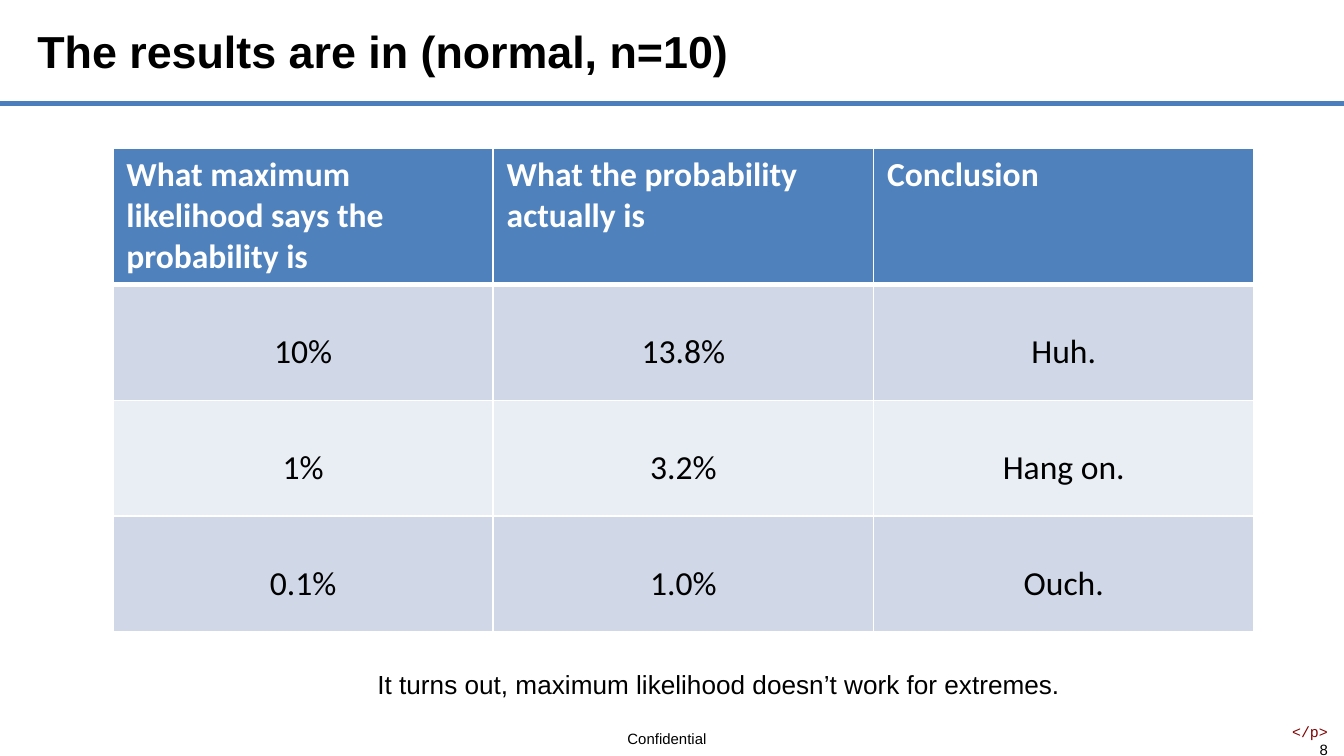
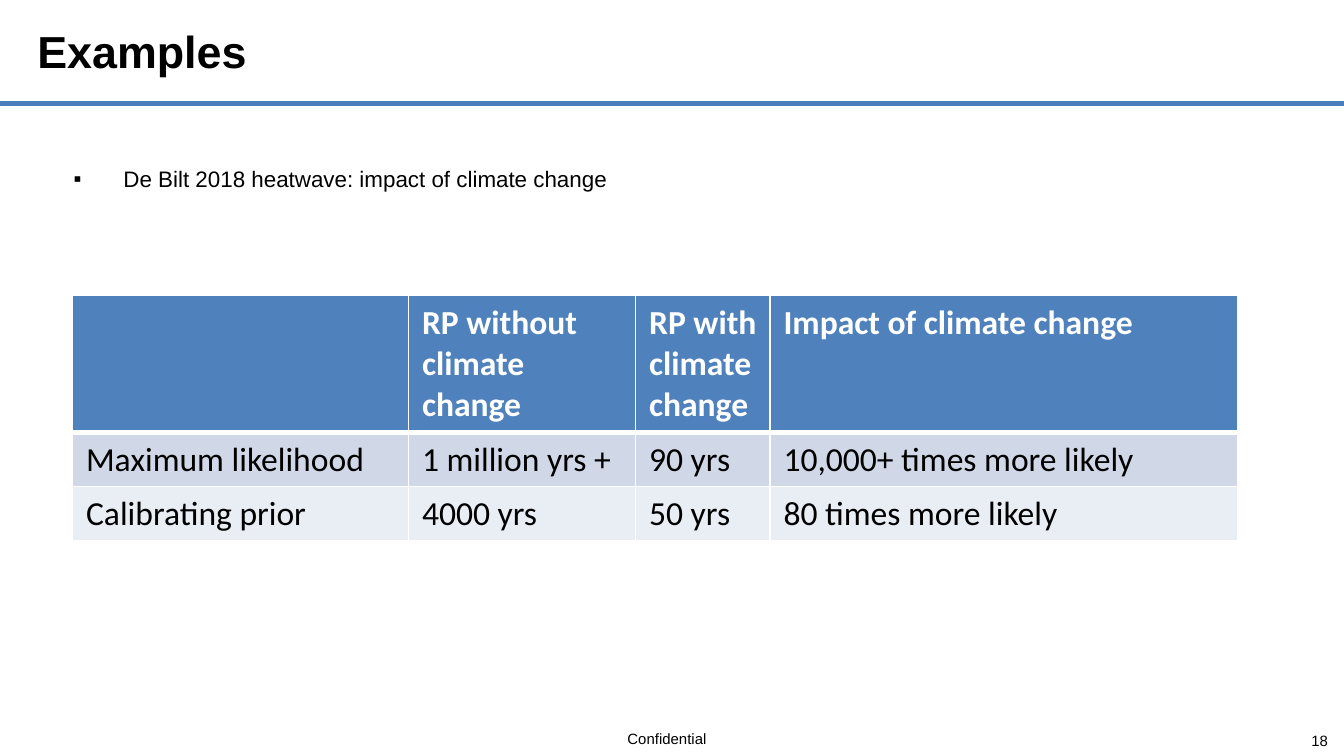
from dataclasses import dataclass
from typing import NamedTuple

from lxml.etree import SubElement
from pptx import Presentation
from pptx.dml.color import RGBColor
from pptx.enum.shapes import MSO_CONNECTOR as Link
from pptx.enum.text import MSO_ANCHOR as Anchor, PP_ALIGN as Align
from pptx.oxml import parse_xml
from pptx.oxml.ns import nsdecls, qn
from pptx.util import Inches, Pt

BLACK = RGBColor(0x00, 0x00, 0x00)
WHITE = RGBColor(0xFF, 0xFF, 0xFF)
MAROON = RGBColor(0x80, 0x00, 0x00)
RULE = RGBColor(0x4B, 0x7E, 0xBC)
HEAD = RGBColor(0x4F, 0x81, 0xBD)
BANDS = (RGBColor(0xD0, 0xD8, 0xE8), RGBColor(0xE9, 0xED, 0xF4))

SANS, MONO, TABLE = "Arial", "Courier New", "Calibri"
WIDE = 10
HIGH = WIDE * 9 / 16
RULE_TOP = 0.77
HEAD_HIGH = 1.02
THIN, THICK = 1, 3


class Run(NamedTuple):
    text: str
    size: float
    font: str = SANS
    color: RGBColor = BLACK
    bold: bool = False


class Box(NamedTuple):
    left: float
    top: float
    width: float
    height: float


TITLE = Box(0.18, 0, 9, 0.75)
FOOTER = Box(4.57, 5.38, 1.06, 0.24)
NUMBER = Box(7.65, 5.36, 2.33, 0.3)


@dataclass
class Grid:
    left: float
    top: float
    widths: list[float]
    row_high: float
    rows: list[list[str]]
    align: Align = Align.LEFT
    inset: float = 0.05  # space above the text of body cells


def add_run(para, run: Run) -> None:
    part = para.add_run()
    part.text = run.text
    font = part.font
    font.name, font.size, font.bold = run.font, Pt(run.size), run.bold
    font.color.rgb = run.color


def add_text(slide, box: Box, lines: list[Run], align=Align.LEFT,
             anchor=Anchor.TOP, inset: float = 0.05):
    """Put each run on its own line; inset is the space above the first."""
    frame = slide.shapes.add_textbox(*map(Inches, box)).text_frame
    frame.word_wrap = True
    frame.vertical_anchor = anchor
    frame.margin_top = Inches(inset)
    for index, run in enumerate(lines):
        para = frame.add_paragraph() if index else frame.paragraphs[0]
        para.alignment = align
        add_run(para, run)
    return frame


def add_bullet(para, indent: float) -> None:
    props = para._p.get_or_add_pPr()
    props.set("marL", str(Inches(indent)))
    props.set("indent", str(-Inches(indent)))
    SubElement(props, qn("a:buFont")).set("typeface", SANS)
    SubElement(props, qn("a:buChar")).set("char", "▪")


def add_rule(slide) -> None:
    line = slide.shapes.add_connector(
        Link.STRAIGHT, 0, Inches(RULE_TOP), Inches(WIDE), Inches(RULE_TOP))
    line.line.color.rgb = RULE
    line.line.width = Pt(2.5)
    SubElement(line._element.spPr, qn("a:effectLst"))


def add_slide(deck, title: str, number: list[Run]):
    slide = deck.slides.add_slide(deck.slide_layouts[6])
    add_rule(slide)
    add_text(slide, FOOTER, [Run("Confidential", 8)])
    add_text(slide, TITLE, [Run(title, 24, bold=True)], anchor=Anchor.MIDDLE)
    add_text(slide, NUMBER, number, Align.RIGHT, Anchor.MIDDLE)
    return slide


def set_edges(cell, top: float, bottom: float) -> None:
    """Draw white borders; top and bottom are widths in points."""
    props = cell._tc.get_or_add_tcPr()
    edges = {"L": THIN, "R": THIN, "T": top, "B": bottom}
    for index, (side, width) in enumerate(edges.items()):
        props.insert(index, parse_xml(
            f'<a:ln{side} {nsdecls("a")} w="{Pt(width)}"><a:solidFill>'
            f'<a:srgbClr val="{WHITE}"/></a:solidFill></a:ln{side}>'))


def add_grid(slide, grid: Grid) -> None:
    highs = [HEAD_HIGH] + [grid.row_high] * (len(grid.rows) - 1)
    box = Box(grid.left, grid.top, sum(grid.widths), sum(highs))
    table = slide.shapes.add_table(
        len(highs), len(grid.widths), *map(Inches, box)).table
    for column, width in zip(table.columns, grid.widths):
        column.width = Inches(width)
    for row, high in zip(table.rows, highs):
        row.height = Inches(high)
    for r, texts in enumerate(grid.rows):
        for c, text in enumerate(texts):
            cell = table.cell(r, c)
            head = r == 0
            cell.fill.solid()
            cell.fill.fore_color.rgb = HEAD if head else BANDS[(r - 1) % 2]
            set_edges(cell, THICK if r == 1 else THIN, THICK if head else THIN)
            para = cell.text_frame.paragraphs[0]
            if not head:
                cell.margin_top = Inches(grid.inset)
                para.alignment = grid.align
            if text:
                add_run(para, Run(text, 18, TABLE, WHITE if head else BLACK, head))


def add_results(deck) -> None:
    slide = add_slide(deck, "The results are in (normal, n=10)",
                      [Run("</p>", 8, MONO, MAROON), Run("8", 8)])
    add_grid(slide, Grid(0.84, 1.1, [2.83] * 3, 0.86, [
        ["What maximum likelihood says the probability is",
         "What the probability actually is", "Conclusion"],
        ["10%", "13.8%", "Huh."],
        ["1%", "3.2%", "Hang on."],
        ["0.1%", "1.0%", "Ouch."],
    ], Align.CENTER, 0.35))
    add_text(slide, Box(2.71, 4.68, 7.29, 0.67),
             [Run("It turns out, maximum likelihood doesn’t work for extremes.", 14)],
             inset=0.29)


def add_cases(deck) -> None:
    slide = add_slide(deck, "Examples", [Run("18", 8)])
    frame = add_text(slide, Box(0.45, 0.97, 4.55, 3.47),
                     [Run("De Bilt 2018 heatwave: impact of climate change", 12)],
                     inset=0.26)
    add_bullet(frame.paragraphs[0], 0.37)
    add_grid(slide, Grid(0.54, 2.2, [2.5, 1.69, 1, 3.48], 0.4, [
        ["", "RP without climate change", "RP with climate change",
         "Impact of climate change"],
        ["Maximum likelihood", "1 million yrs +", "90 yrs",
         "10,000+ times more likely"],
        ["Calibrating prior", "4000 yrs", "50 yrs", "80 times more likely"],
    ]))


def main() -> None:
    deck = Presentation()
    deck.slide_width, deck.slide_height = Inches(WIDE), Inches(HIGH)
    add_results(deck)
    add_cases(deck)
    deck.save("out.pptx")


if __name__ == "__main__":
    main()
